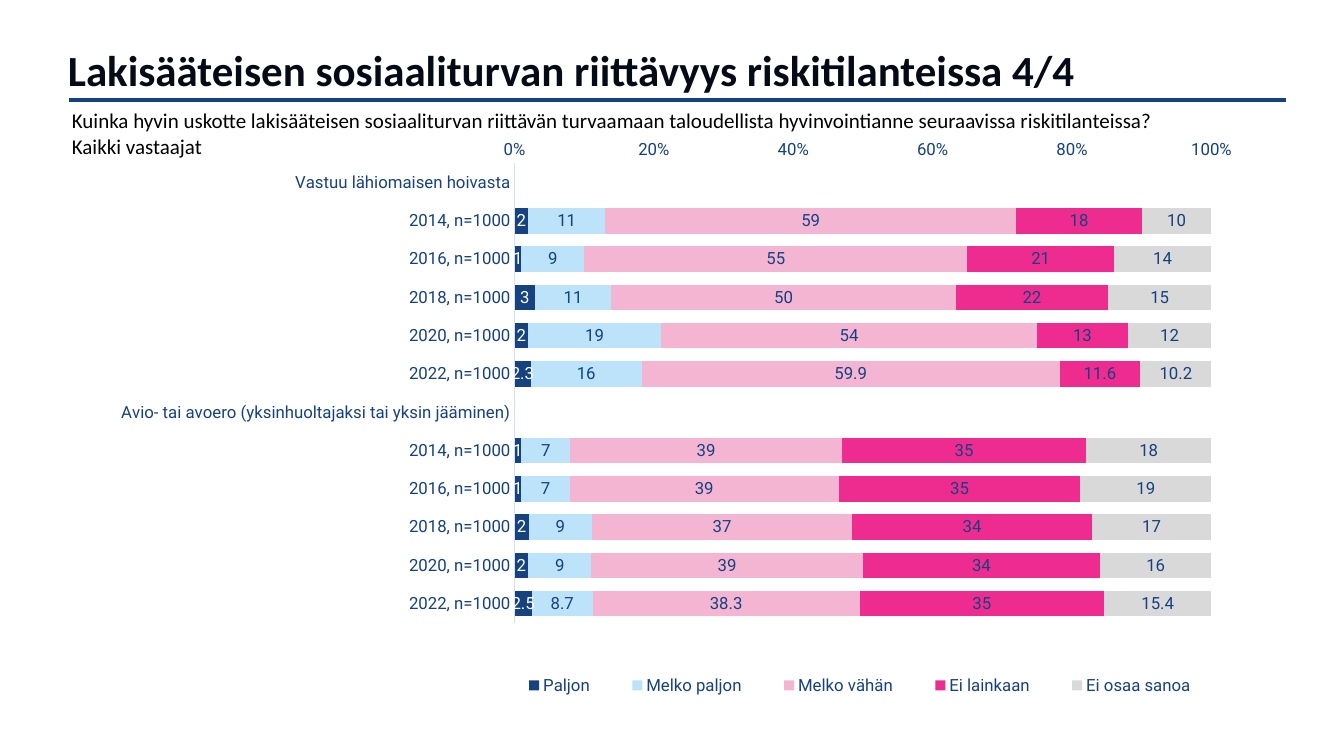
from lxml import etree
from pptx import Presentation
from pptx import util as u
from pptx.chart.data import CategoryChartData
from pptx.dml.color import RGBColor
from pptx.enum import chart as ch, shapes
from pptx.oxml import parse_xml
from pptx.oxml.ns import nsdecls, qn

PX = 914400 / 100.8
COLORS = {
    "navy": "164180", "title": "040B16", "black": "000000",
    "white": "FFFFFF", "axis": "D1E0F7",
    "Paljon": "164280", "Melko paljon": "BCE3FA", "Melko vähän": "F4B5D3",
    "Ei lainkaan": "EE2C90", "Ei osaa sanoa": "D9D9D9",
}


def px(*lengths):
    return [u.Emu(round(n * PX)) for n in lengths]


def place(part, index, inner, **fracs):
    """Give a chart part a fixed place, in fractions of the chart."""
    for old in part.findall(qn("c:layout")):
        part.remove(old)
    tags = '<c:layoutTarget val="inner"/>' if inner else ""
    tags += '<c:xMode val="edge"/><c:yMode val="edge"/>'
    tags += "".join(f'<c:{k} val="{v}"/>' for k, v in fracs.items())
    part.insert(index, parse_xml(
        f'<c:layout {nsdecls("c")}><c:manualLayout>{tags}</c:manualLayout></c:layout>'))


prs = Presentation()
prs.slide_width, prs.slide_height = px(1344, 756)
slide = prs.slides.add_slide(prs.slide_layouts[6])
rgb = {name: RGBColor.from_string(code) for name, code in COLORS.items()}

# Chart data: each topic is a heading row followed by its survey years
years = [f"{year}, n=1000" for year in range(2014, 2023, 2)]
topics = ["Vastuu lähiomaisen hoivasta",
          "Avio- tai avoero (yksinhuoltajaksi tai yksin jääminen)"]
answers = {
    "Paljon": ([2, 1, 3, 2, 2.3], [1, 1, 2, 2, 2.5]),
    "Melko paljon": ([11, 9, 11, 19, 16], [7, 7, 9, 9, 8.7]),
    "Melko vähän": ([59, 55, 50, 54, 59.9], [39, 39, 37, 39, 38.3]),
    "Ei lainkaan": ([18, 21, 22, 13, 11.6], [35, 35, 34, 34, 35]),
    "Ei osaa sanoa": ([10, 14, 15, 12, 10.2], [18, 19, 17, 16, 15.4]),
}
data = CategoryChartData()
data.categories = [row for topic in topics for row in [topic, *years]]
for name, (care, split) in answers.items():
    data.add_series(name, [None, *care, None, *split])

chart = slide.shapes.add_chart(
    ch.XL_CHART_TYPE.BAR_STACKED_100, *px(27, 127, 1225, 607), data).chart
chart.has_title = False
chart.font.size = u.Pt(12)
chart.font.name = "Roboto"
chart.font.color.rgb = rgb["navy"]

plot = chart.plots[0]
plot.gap_width, plot.overlap = 50, 100
plot.vary_by_categories = False
for series in plot.series:
    series.format.fill.solid()
    series.format.fill.fore_color.rgb = rgb[series.name]
    labels = series.data_labels
    labels.show_value = True
    labels.position = ch.XL_LABEL_POSITION.CENTER
    labels.font.size = u.Pt(12)
    labels.font.name = "Roboto"
    labels.font.color.rgb = rgb["white" if series.name == "Paljon" else "navy"]

rows, scale = chart.category_axis, chart.value_axis
for axis in (rows, scale):
    axis.has_major_gridlines = False
    axis.major_tick_mark = axis.minor_tick_mark = ch.XL_TICK_MARK.NONE
rows.reverse_order = True
rows.crosses = ch.XL_AXIS_CROSSES.MAXIMUM
rows.format.line.color.rgb = rgb["axis"]
rows.format.line.width = u.Pt(0.75)
scale.format.line.fill.background()
scale.minimum_scale, scale.maximum_scale, scale.major_unit = 0, 1, 0.2
scale.tick_labels.number_format = "0%"
scale.tick_labels.number_format_is_linked = False

chart.has_legend = True
chart.legend.position = ch.XL_LEGEND_POSITION.BOTTOM
chart.legend.include_in_layout = False
area = chart.element.find(".//" + qn("c:plotArea"))
place(area, 0, True, x=0.398, y=0.06, w=0.569, h=0.757)
place(chart.element.find(".//" + qn("c:legend")), 1, False,
      x=0.38, y=0.89, w=0.6, h=0.06)

# Heading, rule and survey question
rule = slide.shapes.add_connector(
    shapes.MSO_CONNECTOR.STRAIGHT, *px(69, 100, 1286, 100))
rule.line.color.rgb = rgb["navy"]
rule.line.width = u.Pt(2.25)
etree.SubElement(rule._element.spPr, qn("a:effectLst"))

texts = [
    ((58, 39, 1238, 62), 30.7, "title", True,
     ["Lakisääteisen sosiaaliturvan riittävyys riskitilanteissa 4/4"]),
    ((62, 103, 1223, 61), 15, "black", False,
     ["Kuinka hyvin uskotte lakisääteisen sosiaaliturvan riittävän turvaamaan "
      "taloudellista hyvinvointianne seuraavissa riskitilanteissa?",
      "Kaikki vastaajat"]),
]
for spot, size, color, bold, lines in texts:
    frame = slide.shapes.add_textbox(*px(*spot)).text_frame
    frame.word_wrap = True
    frame.text = "\n".join(lines)
    for para in frame.paragraphs:
        font = para.runs[0].font
        font.name, font.size, font.bold = "Calibri", u.Pt(size), bold
        font.color.rgb = rgb[color]

prs.save("out.pptx")
